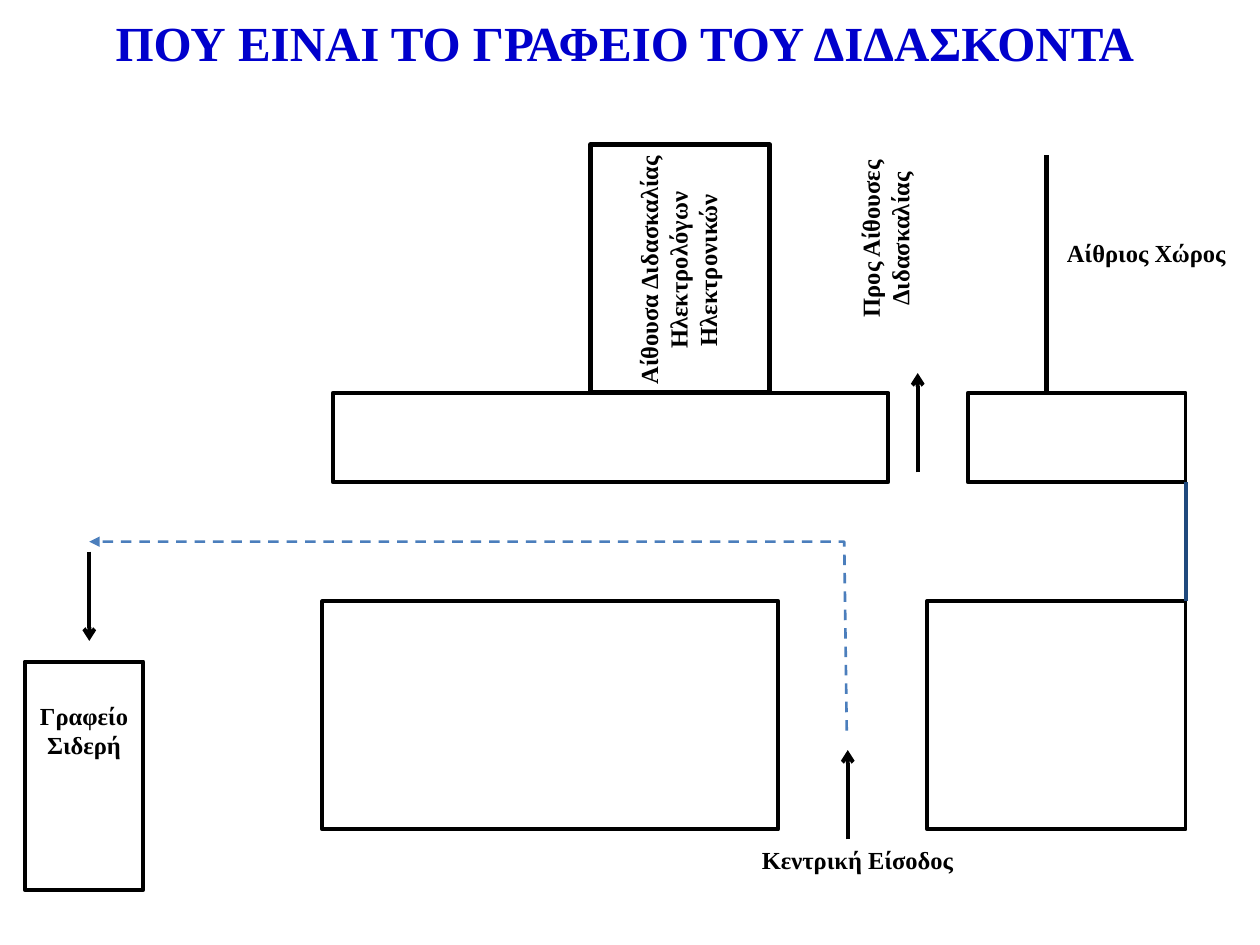
from pptx import Presentation
from pptx.dml.color import RGBColor
from pptx.enum.dml import MSO_LINE
from pptx.enum.shapes import MSO_CONNECTOR, MSO_SHAPE
from pptx.enum.text import MSO_AUTO_SIZE, PP_ALIGN
from pptx.oxml.ns import qn
from pptx.util import Cm, Pt
from lxml.etree import SubElement

BLACK = RGBColor(0x00, 0x00, 0x00)
TITLE_BLUE = RGBColor(0x00, 0x00, 0xCC)
WALL_BLUE = RGBColor(0x1F, 0x49, 0x7D)
ROUTE_BLUE = RGBColor(0x4B, 0x7E, 0xBC)
FONT = "Times New Roman"


def add_text(s, box, lines, size=14, color=BLACK, align=PP_ALIGN.CENTER,
             rotation=0, wrap=True):
    sp = s.shapes.add_textbox(*map(Cm, box))
    sp.rotation = rotation
    tf = sp.text_frame
    tf.word_wrap = wrap
    tf.auto_size = MSO_AUTO_SIZE.SHAPE_TO_FIT_TEXT
    for i, line in enumerate(lines):
        p = tf.add_paragraph() if i else tf.paragraphs[0]
        p.alignment = align
        r = p.add_run()
        r.text = line
        r.font.name, r.font.size, r.font.bold = FONT, Pt(size), True
        r.font.color.rgb = color


def style_line(sp, color, width, arrow=None):
    sp.line.color.rgb = color
    sp.line.width = Pt(width)
    if arrow:
        SubElement(sp.line._get_or_add_ln(), qn("a:tailEnd"), type=arrow)


def add_room(s, box, width=2.25):
    sp = s.shapes.add_shape(MSO_SHAPE.RECTANGLE, *map(Cm, box))
    sp.shadow.inherit = False
    sp.fill.background()
    style_line(sp, BLACK, width)


def add_vertical(s, x, y1, y2, color=BLACK, width=2.25, arrow=None):
    sp = s.shapes.add_connector(MSO_CONNECTOR.STRAIGHT,
                                Cm(x), Cm(y1), Cm(x), Cm(y2))
    style_line(sp, color, width, arrow)
    SubElement(sp._element.spPr, qn("a:effectLst"))


def add_title(s, box):
    add_text(s, box, ["ΠΟΥ ΕΙΝΑΙ ΤΟ ΓΡΑΦΕΙΟ ΤΟΥ ΔΙΔΑΣΚΟΝΤΑ"], 28, TITLE_BLUE)


def add_rooms(s, left, top):
    # Lower row, upper row, then the teacher's office
    for x, y, w, h in [(6, 9.2, 9.19, 4.6), (18.19, 9.2, 5.21, 4.6),
                       (19.01, 5, 4.39, 1.8), (6.21, 5, 11.2, 1.8),
                       (0, 10.42, 2.39, 4.6)]:
        add_room(s, (left + x, top + y, w, h))
    # Classroom
    add_room(s, (left + 11.41, top, 3.61, 5), 3)
    # Walls
    add_vertical(s, left + 23.4, top + 6.8, top + 9.2, WALL_BLUE)
    add_vertical(s, left + 20.6, top + 5, top + 0.2, width=3)


def add_route(s, left, top):
    # Arrows: entrance, classrooms, office
    for x, y1, y2 in [(16.59, 14, 12.2), (18, 6.6, 4.6), (1.3, 8.2, 10)]:
        add_vertical(s, left + x, top + y1, top + y2, arrow="arrow")
    # Dashed path from the entrance to the office
    start, *rest = [(Cm(left + x), Cm(top + y))
                    for x, y in [(16.57, 11.81), (16.52, 8), (1.3, 8)]]
    builder = s.shapes.build_freeform(*start)
    builder.add_line_segments(rest, close=False)
    sp = builder.convert_to_shape()
    sp.shadow.inherit = False
    sp.fill.background()
    sp.line.dash_style = MSO_LINE.DASH
    style_line(sp, ROUTE_BLUE, 1.5, "triangle")


def add_labels(s, left, top):
    add_text(s, (left + 14.61, top + 14, 4.39, 0.86), ["Κεντρική Είσοδος"],
             align=PP_ALIGN.LEFT)
    add_text(s, (left, top + 11.08, 2.39, 1.45), ["Γραφείο Σιδερή"])
    add_text(s, (left + 20.4, top + 1.75, 4.42, 0.86), ["Αίθριος Χώρος"])
    # Labels read from bottom to top
    add_text(s, (left + 10.6, top + 1.5, 5.16, 2.06),
             ["Αίθουσα Διδασκαλίας", "Ηλεκτρολόγων", "Ηλεκτρονικών"],
             rotation=270, wrap=False)
    add_text(s, (left + 14.64, top + 1.17, 5.41, 1.45),
             ["Προς Αίθουσες Διδασκαλίας"], rotation=270)


def main():
    prs = Presentation()
    prs.slide_width, prs.slide_height = Cm(25.4), Cm(19.05)
    s = prs.slides.add_slide(prs.slide_layouts[6])
    add_title(s, (1.7, 0.13, 21.79, 1.45))
    plan = (0.5, 2.92)
    add_rooms(s, *plan)
    add_route(s, *plan)
    add_labels(s, *plan)
    prs.save("out.pptx")


if __name__ == "__main__":
    main()
